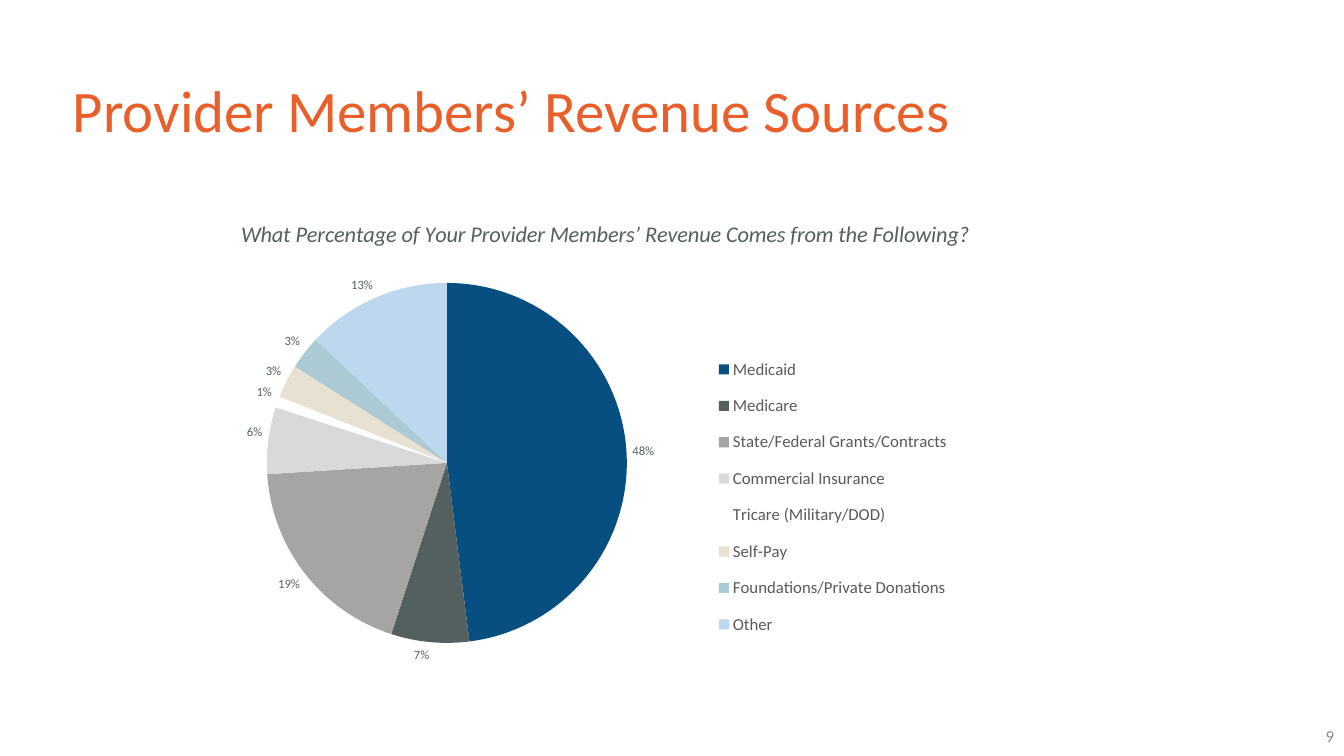
from pptx import Presentation
from pptx.chart.data import CategoryChartData
from pptx.dml.color import RGBColor
from pptx.enum.chart import XL_CHART_TYPE, XL_LABEL_POSITION, XL_LEGEND_POSITION
from pptx.enum.text import MSO_ANCHOR, PP_ALIGN
from pptx.oxml import parse_xml
from pptx.oxml.ns import nsdecls, qn
from pptx.util import Emu, Pt

FONT = "Calibri"
COLORS = {"title": "EA5E29", "page": "8C8C8C", "chart": "53605F", "legend": "595959"}
REVENUE = [
    ("Medicaid", 48, "064F80"),
    ("Medicare", 7, "53605F"),
    ("State/Federal Grants/Contracts", 19, "A5A5A5"),
    ("Commercial Insurance", 6, "D9D9D9"),
    ("Tricare (Military/DOD)", 1, "FFFFFF"),
    ("Self-Pay", 3, "E8E0D1"),
    ("Foundations/Private Donations", 3, "ACCAD3"),
    ("Other", 13, "BDD7EE"),
]


def px(n):
    return Emu(round(n * 914400 / 100.8))


def style_font(font, size, color):
    font.name = FONT
    font.size = Pt(size)
    font.color.rgb = RGBColor.from_string(COLORS[color])


def add_text(s, box, text, size, color, align=PP_ALIGN.LEFT, spacing=1.0):
    tf = s.shapes.add_textbox(*map(px, box)).text_frame
    tf.word_wrap = True
    tf.vertical_anchor = MSO_ANCHOR.MIDDLE
    p = tf.paragraphs[0]
    p.text = text
    p.alignment = align
    p.line_spacing = spacing
    style_font(p.font, size, color)


def set_layout(element, index, chart_box, x, y, w=None, h=None, inner=False):
    """Fix a chart part at an offset in px inside the chart's box."""
    for old in element.findall(qn("c:layout")):
        element.remove(old)
    width, height = chart_box[2:]
    values = [("xMode", "edge"), ("yMode", "edge"),
              ("x", round(x / width, 4)), ("y", round(y / height, 4))]
    if w:
        values += [("w", round(w / width, 4)), ("h", round(h / height, 4))]
    if inner:
        values.insert(0, ("layoutTarget", "inner"))
    parts = "".join(f'<c:{tag} val="{val}"/>' for tag, val in values)
    element.insert(index, parse_xml(
        f'<c:layout {nsdecls("c")}><c:manualLayout>{parts}</c:manualLayout></c:layout>'))


def add_revenue_pie(s, box):
    data = CategoryChartData()
    data.categories = [name for name, _, _ in REVENUE]
    data.add_series("Series 1", [value for _, value, _ in REVENUE])
    chart = s.shapes.add_chart(XL_CHART_TYPE.PIE, *map(px, box), data).chart
    chart.font.name = FONT
    chart.font.size = Pt(10)

    tf = chart.chart_title.text_frame
    p = tf.paragraphs[0]
    p.text = "What Percentage of Your Provider Members’ Revenue Comes from the Following?"
    style_font(p.font, 16, "chart")
    p.font.bold = False
    p.font.italic = True
    chart.chart_title.include_in_layout = False
    set_layout(chart.chart_title._element, 1, box, 130, 13)

    chart.has_legend = True
    legend = chart.legend
    legend.position = XL_LEGEND_POSITION.RIGHT
    legend.include_in_layout = False
    style_font(legend.font, 12, "legend")
    set_layout(legend._element, 1, box, 601, 141, 250, 308)

    plot = chart.plots[0]
    plot.vary_by_categories = True
    set_layout(plot._element.getparent(), 0, box, 160, 81, 360, 360, inner=True)
    for i, (_, _, color) in enumerate(REVENUE):
        fill = plot.series[0].points[i].format.fill
        fill.solid()
        fill.fore_color.rgb = RGBColor.from_string(color)

    labels = plot.series[0].data_labels
    labels.show_percentage = True
    labels.show_value = False
    labels.number_format = "0%"
    labels.number_format_is_linked = False
    labels.position = XL_LABEL_POSITION.OUTSIDE_END
    style_font(labels.font, 9, "chart")


def main():
    prs = Presentation()
    prs.slide_width, prs.slide_height = px(1344), px(756)
    s = prs.slides.add_slide(prs.slide_layouts[6])
    add_text(s, (63, 40, 1220, 146), "Provider Members’ Revenue Sources", 42, "title",
             spacing=0.9)
    add_revenue_pie(s, (107, 202, 935, 476))
    add_text(s, (1042, 716, 302, 40), "9", 12, "page", PP_ALIGN.RIGHT)
    prs.save("out.pptx")


if __name__ == "__main__":
    main()
